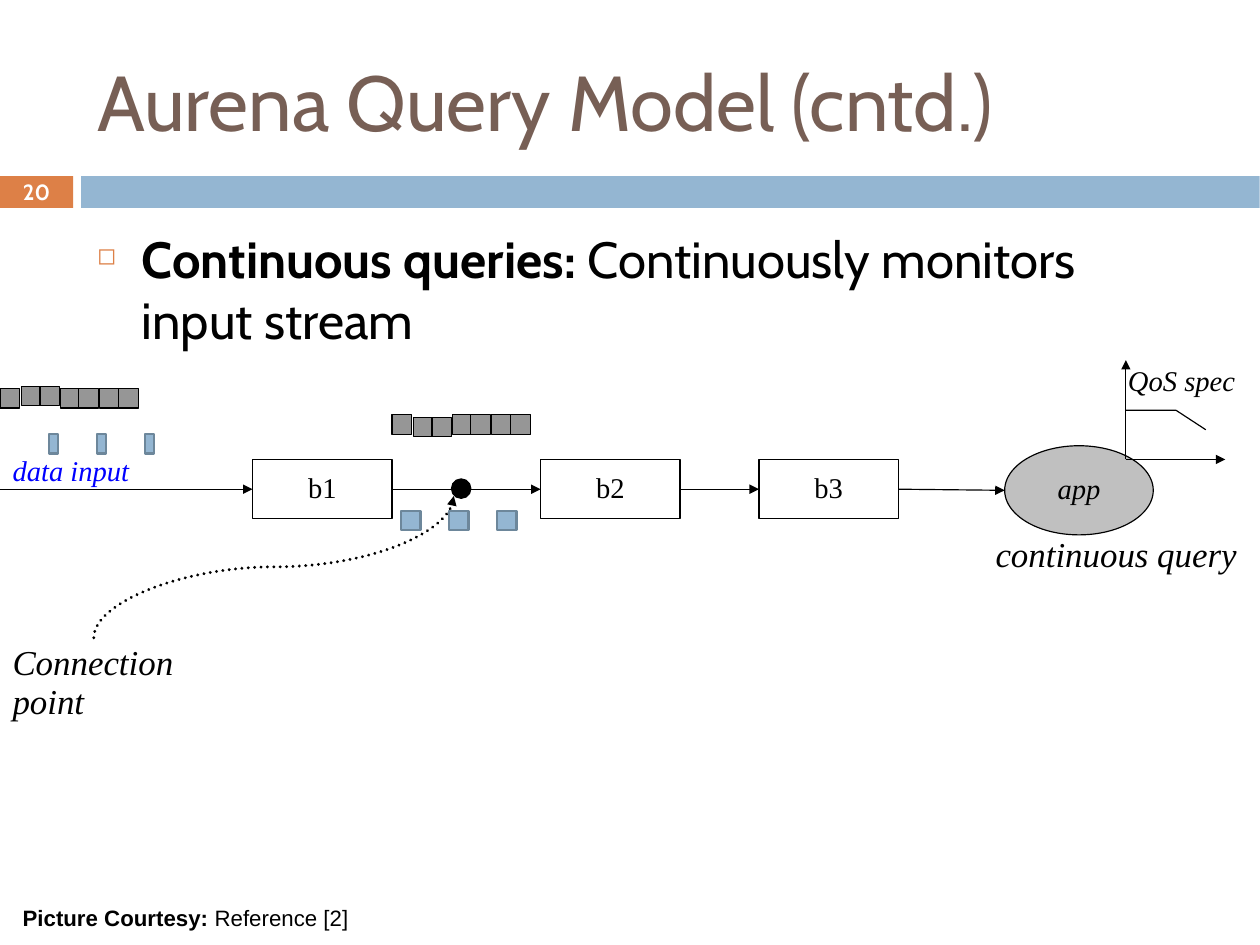
from dataclasses import dataclass
from lxml.etree import SubElement
from pptx import Presentation
from pptx.dml.color import RGBColor
from pptx.enum.dml import MSO_LINE
from pptx.enum.shapes import MSO_CONNECTOR, MSO_SHAPE
from pptx.enum.text import MSO_ANCHOR, PP_ALIGN
from pptx.oxml.ns import qn
from pptx.util import Inches, Pt


@dataclass(frozen=True)
class Theme:
    black: str = "000000"
    white: str = "FFFFFF"
    brown: str = "775F55"
    orange: str = "DD8047"
    blue: str = "94B6D2"
    edge: str = "6D879B"
    gray: str = "969696"
    silver: str = "C0C0C0"
    link: str = "0000FF"
    sans: str = "Cabin"
    serif: str = "Times New Roman"
    plain: str = "Arial"
    title: float = 49
    body: float = 32
    note: float = 22
    label: float = 18
    credit: float = 14
    number: float = 13.9
    thin: float = 0.75
    rim: float = 1.5
    dots: float = 2


T = Theme()


def tint(code):
    return RGBColor.from_string(code)


def write(shape, *lines, lead="", size=T.label, color=T.black, font=T.serif,
          bold=False, italic=False, align=PP_ALIGN.LEFT, anchor=MSO_ANCHOR.TOP,
          wrap=False, inset=(0.11, 0.06), spacing=0.93):
    frame = shape.text_frame
    frame.word_wrap = wrap
    frame.vertical_anchor = anchor
    frame.margin_left = frame.margin_right = Inches(inset[0])
    frame.margin_top = frame.margin_bottom = Inches(inset[1])
    for i, line in enumerate(lines):
        para = frame.add_paragraph() if i else frame.paragraphs[0]
        para.alignment = align
        para.line_spacing = spacing
        parts = [(lead, True), (line, bold)] if lead else [(line, bold)]
        for words, heavy in parts:
            run = para.add_run()
            run.text = words
            run.font.name = font
            run.font.size = Pt(size)
            run.font.bold = heavy
            run.font.italic = italic
            run.font.color.rgb = tint(color)
    return frame


def label(slide, x, y, w, h, *lines, **style):
    box = slide.shapes.add_textbox(Inches(x), Inches(y), Inches(w), Inches(h))
    return write(box, *lines, **style)


def block(slide, x, y, w, h, fill, line=None, width=T.thin, kind=MSO_SHAPE.RECTANGLE):
    shape = slide.shapes.add_shape(kind, Inches(x), Inches(y), Inches(w), Inches(h))
    shape.shadow.inherit = False
    shape.fill.solid()
    shape.fill.fore_color.rgb = tint(fill)
    if line:
        shape.line.color.rgb = tint(line)
        shape.line.width = Pt(width)
    else:
        shape.line.fill.background()
    return shape


def arrow(slide, x1, y1, x2, y2, width=T.thin, kind=MSO_CONNECTOR.STRAIGHT):
    link = slide.shapes.add_connector(kind, Inches(x1), Inches(y1), Inches(x2), Inches(y2))
    link.line.color.rgb = tint(T.black)
    link.line.width = Pt(width)
    SubElement(link.line._get_or_add_ln(), qn("a:tailEnd"), type="triangle")
    SubElement(link._element.spPr, qn("a:effectLst"))
    return link


def header(slide, x, y, w, h):
    bar = y + h - 0.28
    block(slide, x, bar, 0.64, 0.28, T.orange)
    block(slide, x + 0.71, bar, w - 0.71, 0.28, T.blue)
    label(slide, x + 0.74, y + 0.28, 9.83, 1.19, "Aurena Query Model (cntd.)",
          size=T.title, color=T.brown, font=T.sans, anchor=MSO_ANCHOR.MIDDLE,
          wrap=True, spacing=1.0)
    label(slide, x, bar - 0.01, 0.64, 0.29, "20", size=T.number, color=T.white,
          font=T.sans, bold=True, align=PP_ALIGN.CENTER, anchor=MSO_ANCHOR.MIDDLE,
          wrap=True, spacing=1.0)


def body(slide, x, y, w, h):
    frame = label(slide, x, y, w, h, " Continuously monitors input stream",
                  lead="Continuous queries:", size=T.body, font=T.sans,
                  wrap=True, spacing=1.0)
    para = frame.paragraphs[0]
    para.space_before = Pt(7.7)
    props = para._p.get_or_add_pPr()
    props.set("marL", str(Inches(0.39)))
    props.set("indent", str(-Inches(0.39)))
    SubElement(SubElement(props, qn("a:buClr")), qn("a:srgbClr"), val=T.orange)
    SubElement(props, qn("a:buSzPct"), val="46000")
    SubElement(props, qn("a:buChar"), char="◻")


def queue(slide, x, y, shift, side=0.17):
    for i, step in enumerate((0, 0.19, 0.35, 0.53, 0.69, 0.87, 1.04)):
        drop = shift if i in (1, 2) else 0
        block(slide, x + step, y + drop, side, side, T.gray, T.black)


def tuples(slide, x, y, w, h, gap=0.42):
    for i in range(3):
        block(slide, x + i * gap, y, w, h, T.blue, T.edge, T.rim)


def flow(slide, x, y, w, h):
    mid = y + h / 2
    centre = dict(align=PP_ALIGN.CENTER, anchor=MSO_ANCHOR.MIDDLE)
    boxes = []
    for name, left in (("b1", 2.21), ("b2", 4.73), ("b3", 6.64)):
        box = block(slide, x + left, mid - 0.27, 1.22, 0.52, T.white, T.black)
        write(box, name, **centre)
        boxes.append(box)
    app = block(slide, x + w - 1.3, y, 1.3, h, T.silver, T.black, kind=MSO_SHAPE.OVAL)
    write(app, "app", italic=True, **centre)
    for start, end in zip([None, *boxes], [*boxes, None]):
        link = arrow(slide, x, mid - 0.01, x + w - 1.3, mid)
        if start:
            link.begin_connect(start, 3)
        if end:
            link.end_connect(end, 1)
    block(slide, x + 3.95, mid - 0.1, 0.17, 0.17, T.black, T.black, kind=MSO_SHAPE.OVAL)


def graph(slide, x, y, w, h):
    base = y + h
    arrow(slide, x, base, x, y)
    arrow(slide, x, base, x + w, base)
    pen = slide.shapes.build_freeform(Inches(x), Inches(y + 0.44), scale=1.0)
    pen.add_line_segments([(Inches(x + 0.44), Inches(y + 0.44)),
                           (Inches(x + 0.7), Inches(y + 0.61))], close=False)
    curve = pen.convert_to_shape()
    curve.shadow.inherit = False
    curve.fill.background()
    curve.line.color.rgb = tint(T.black)
    curve.line.width = Pt(T.thin)
    label(slide, x - 0.08, y, 1.15, 0.38, "QoS spec", italic=True, inset=(0.1, 0.05))


def pointer(slide, x, y, w, h):
    cx, cy = x + w / 2, y + h / 2
    link = arrow(slide, cx + h / 2, cy + w / 2, cx - h / 2, cy - w / 2,
                 T.dots, MSO_CONNECTOR.CURVE)
    link._element.spPr.find(qn("a:xfrm")).set("rot", "5400000")
    link.line.dash_style = MSO_LINE.ROUND_DOT
    link.line._get_or_add_ln().set("cap", "rnd")


def notes(slide, x, y, w, h):
    label(slide, x + w - 2.42, y + 0.7, 2.35, 0.46, "continuous query",
          size=T.note, italic=True)
    label(slide, x, y + 1.65, 1.64, 0.8, "Connection", "point", size=T.note, italic=True)
    label(slide, x, y, 1.25, 0.39, "data input", color=T.link, italic=True)
    label(slide, x + 0.1, y + h - 0.33, 3.5, 0.33, "Reference [2]",
          lead="Picture Courtesy: ", size=T.credit, font=T.plain, wrap=True,
          inset=(0.1, 0.05))


def main():
    deck = Presentation()
    deck.slide_width = Inches(28 / 2.54)
    deck.slide_height = Inches(21 / 2.54)
    slide = deck.slides.add_slide(deck.slide_layouts[6])
    header(slide, 0, 0, 11.02, 1.82)
    body(slide, 0.74, 1.93, 9.83, 1.12)
    flow(slide, 0, 3.9, 10.09, 0.78)
    graph(slide, 9.85, 3.15, 0.87, 0.87)
    pointer(slide, 0.82, 4.34, 3.15, 1.24)
    queue(slide, 0, 3.4, -0.02)
    queue(slide, 3.43, 3.63, 0.02)
    notes(slide, 0, 3.93, 11.02, 4.28)
    tuples(slide, 0.43, 3.8, 0.08, 0.17)
    tuples(slide, 3.51, 4.47, 0.17, 0.17)
    deck.save("out.pptx")


if __name__ == "__main__":
    main()
